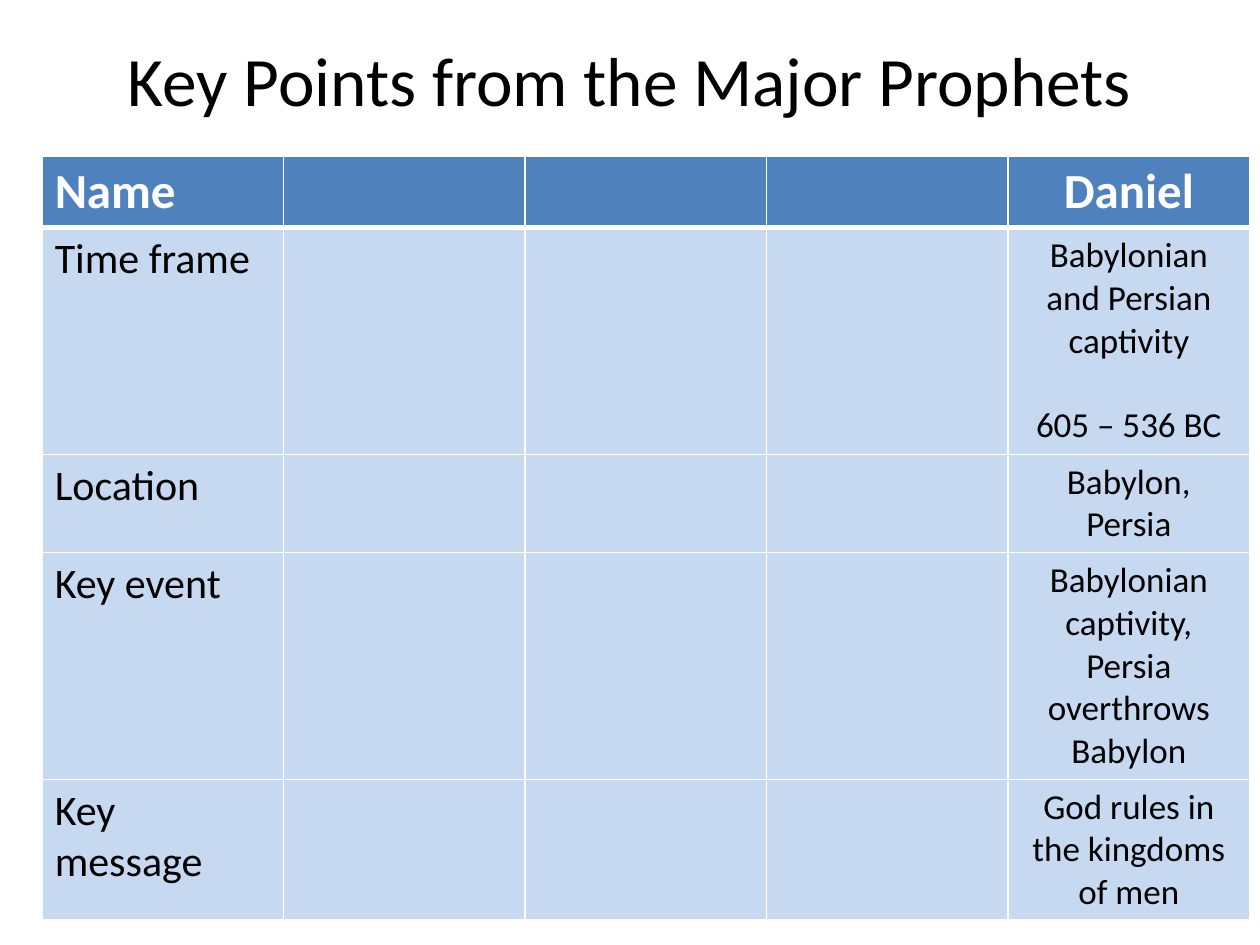
import pptx
import pptx.dml.color
import pptx.enum.text
import pptx.oxml
import pptx.oxml.ns
import pptx.util

Cm, Pt = pptx.util.Cm, pptx.util.Pt
RGBColor = pptx.dml.color.RGBColor
PP_ALIGN = pptx.enum.text.PP_ALIGN

BLACK = RGBColor(0x00, 0x00, 0x00)
WHITE = RGBColor(0xFF, 0xFF, 0xFF)
HEADER_BLUE = RGBColor(0x4F, 0x81, 0xBD)
BODY_BLUE = RGBColor(0xC6, 0xD9, 0xF1)
FONT = "Calibri"
COLUMN_COUNT = 5

PROPHET_FACTS = [
    ("Name", ["Daniel"], 1.45),
    ("Time frame", ["Babylonian and Persian captivity", "605 – 536 BC"], 4.57),
    ("Location", ["Babylon,", "Persia"], 1.98),
    ("Key event", ["Babylonian captivity,", "Persia overthrows Babylon"], 4.57),
    ("Key message", ["God rules in the kingdoms of men"], 2.84),
]


def write_lines(frame, lines, size, color, align, bold=False, gap=0):
    """Write each line as a paragraph, with a gap in points between them."""
    for index, line in enumerate(lines):
        paragraph = frame.add_paragraph() if index else frame.paragraphs[0]
        paragraph.alignment = align
        if index and gap:
            paragraph.space_before = Pt(gap)
        run = paragraph.add_run()
        run.text = line
        run.font.name = FONT
        run.font.size = Pt(size)
        run.font.bold = bold
        run.font.color.rgb = color


def style_cell(cell, fill, bottom_width):
    """Fill a cell and give it white borders."""
    properties = cell._tc.get_or_add_tcPr()
    for tag, width in (("lnL", 1), ("lnR", 1), ("lnT", 1), ("lnB", bottom_width)):
        properties.append(pptx.oxml.parse_xml(
            f'<a:{tag} {pptx.oxml.ns.nsdecls("a")} w="{Pt(width)}"><a:solidFill>'
            f'<a:srgbClr val="{WHITE}"/></a:solidFill></a:{tag}>'))
    cell.fill.solid()
    cell.fill.fore_color.rgb = fill


def add_title(slide, left, top, width, height):
    """Place the centred slide title in the given box."""
    title = slide.shapes.add_textbox(left, top, width, height).text_frame
    title.word_wrap = True
    title.vertical_anchor = pptx.enum.text.MSO_ANCHOR.MIDDLE
    write_lines(title, ["Key Points from the Major Prophets"], 39.6, BLACK, PP_ALIGN.CENTER)


def add_prophets_table(slide, left, top, width):
    """Place the table of prophets, with equal columns across the width."""
    height = Cm(sum(row_height for _, _, row_height in PROPHET_FACTS))
    prophets = slide.shapes.add_table(
        len(PROPHET_FACTS), COLUMN_COUNT, left, top, width, height).table
    for column in prophets.columns:
        column.width = width // COLUMN_COUNT
    for index, (topic, facts, row_height) in enumerate(PROPHET_FACTS):
        header = index == 0
        prophets.rows[index].height = Cm(row_height)
        for cell in prophets.rows[index].cells:
            style_cell(cell, HEADER_BLUE if header else BODY_BLUE, 3 if header else 1)
        color = WHITE if header else BLACK
        write_lines(prophets.cell(index, 0).text_frame, [topic],
                    28 if header else 24, color, PP_ALIGN.LEFT, header)
        write_lines(prophets.cell(index, COLUMN_COUNT - 1).text_frame, facts,
                    28 if header else 20, color, PP_ALIGN.CENTER, header,
                    gap=24 if topic == "Time frame" else 0)


def main():
    """Build the slide and save it."""
    presentation = pptx.Presentation()
    presentation.slide_width, presentation.slide_height = Cm(25.4), Cm(19.05)
    slide = presentation.slides.add_slide(presentation.slide_layouts[6])
    add_title(slide, Cm(1.27), Cm(0), Cm(22.86), Cm(3.18))
    add_prophets_table(slide, Cm(0.85), Cm(3.14), Cm(24.34))
    presentation.save("out.pptx")


if __name__ == "__main__":
    main()
